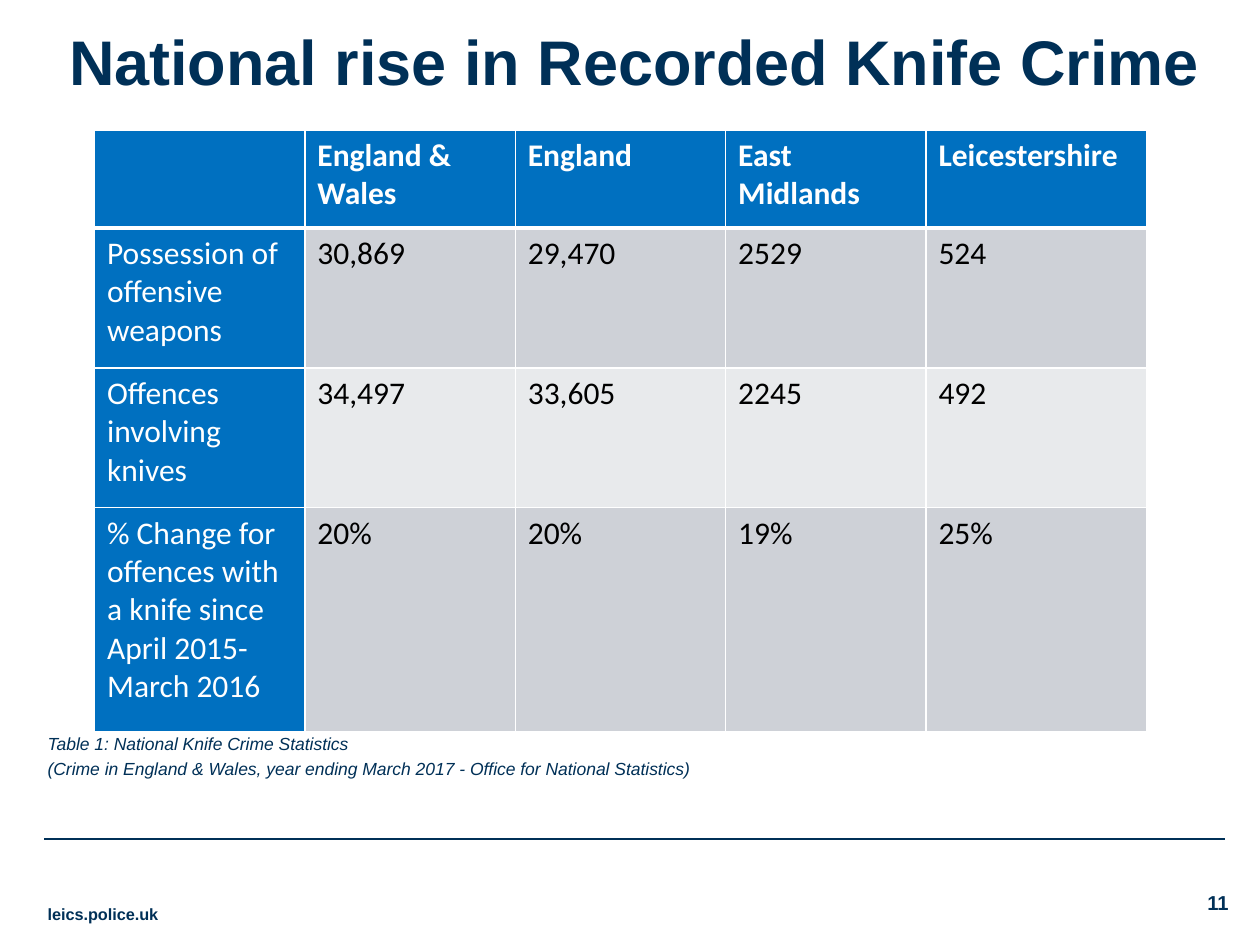
from lxml import etree
from pptx import Presentation
from pptx.dml.color import RGBColor
from pptx.enum.shapes import MSO_CONNECTOR
from pptx.enum.text import PP_ALIGN
from pptx.oxml import parse_xml
from pptx.oxml.ns import nsdecls, qn
from pptx.util import Inches, Pt

STRAIGHT = MSO_CONNECTOR.STRAIGHT
LEFT, RIGHT = PP_ALIGN.LEFT, PP_ALIGN.RIGHT
NAVY = RGBColor(0x00, 0x30, 0x57)
BLUE = RGBColor(0x00, 0x70, 0xC0)
WHITE = RGBColor(0xFF, 0xFF, 0xFF)
BLACK = RGBColor(0x00, 0x00, 0x00)
DARK_BAND = RGBColor(0xCE, 0xD1, 0xD7)
LIGHT_BAND = RGBColor(0xE8, 0xEA, 0xEC)

TITLE = {"size": Pt(36), "bold": True}
CAPTION = {"size": Pt(10), "italic": True}
NUMBER = {"size": Pt(11.5), "bold": True}
ADDRESS = {"size": Pt(16), "bold": True}

COLUMN_WIDTHS = [1.67, 1.67, 1.67, 1.59, 1.75]
ROW_HEIGHTS = [0.78, 1.11, 1.11, 1.78]
CRIME_ROWS = [
    ["", "England & Wales", "England", "East Midlands", "Leicestershire"],
    ["Possession of offensive weapons", "30,869", "29,470", "2529", "524"],
    ["Offences involving knives", "34,497", "33,605", "2245", "492"],
    ["% Change for offences with a knife since April 2015- March 2016",
     "20%", "20%", "19%", "25%"],
]


class SlideBuilder:
    """Holds the house style and the current slide."""

    text_format = {"name": "Arial"}
    cell_format = {"name": "Calibri", "size": Pt(18)}

    def __init__(self, slide):
        self.slide = slide

    def add_span(self, para, text, color, *formats):
        span = para.add_run()
        span.text = text
        for values in formats:
            for name, value in values.items():
                setattr(span.font, name, value)
        span.font.color.rgb = color
        return span

    def text(self, area, lines, style, align=LEFT, gap=0):
        box = self.slide.shapes.add_textbox(*map(Inches, area))
        frame = box.text_frame
        frame.word_wrap = True
        for index, line in enumerate(lines):
            para = frame.add_paragraph() if index else frame.paragraphs[0]
            para.alignment = align
            if index:
                para.space_before = Pt(gap)
            span = self.add_span(para, line, NAVY, self.text_format, style)
        return span

    def superscript(self, area, line, style):
        span = self.text(area, [line], style)
        span.font._element.set("baseline", "30000")

    def rule(self, left, right, top):
        ends = map(Inches, (left, top, right, top))
        line = self.slide.shapes.add_connector(STRAIGHT, *ends)
        line.line.color.rgb = NAVY
        line.line.width = Pt(0.75)
        etree.SubElement(line._element.spPr, qn("a:effectLst"))

    def borders(self, cell, widths):
        properties = cell._tc.get_or_add_tcPr()
        for index, (side, width) in enumerate(widths.items()):
            properties.insert(index, parse_xml(
                f'<a:ln{side} {nsdecls("a")} w="{Pt(width)}"><a:solidFill>'
                f'<a:srgbClr val="{WHITE}"/></a:solidFill></a:ln{side}>'))

    def table(self, left, top, widths, heights, rows):
        area = map(Inches, (left, top, sum(widths), sum(heights)))
        table = self.slide.shapes.add_table(len(rows), len(widths), *area).table
        for column, width in zip(table.columns, widths):
            column.width = Inches(width)
        for row, height in zip(table.rows, heights):
            row.height = Inches(height)
        for r, values in enumerate(rows):
            for c, value in enumerate(values):
                cell = table.cell(r, c)
                heading = r == 0 or c == 0
                cell.fill.solid()
                band = DARK_BAND if r % 2 else LIGHT_BAND
                cell.fill.fore_color.rgb = BLUE if heading else band
                self.borders(cell, {"L": 1, "R": 1, "T": 3 if r == 1 else 1,
                                    "B": 3 if r == 0 else 1})
                if value:
                    self.add_span(cell.text_frame.paragraphs[0], value,
                                  WHITE if heading else BLACK,
                                  self.cell_format, {"bold": r == 0})


def main():
    deck = Presentation()
    deck.slide_width, deck.slide_height = Inches(10), Inches(7.5)
    page = SlideBuilder(deck.slides.add_slide(deck.slide_layouts[6]))
    page.rule(0.35, 9.72, 6.66)
    page.superscript((0.28, 7.1, 1.34, 0.64), "leics.police.uk", ADDRESS)
    page.text((0.28, 5.77, 9.37, 0.45), [
        "Table 1: National Knife Crime Statistics",
        "(Crime in England & Wales, year ending March 2017 - Office for National Statistics)",
    ], CAPTION, gap=2)
    page.text((9.41, 7.02, 0.44, 0.35), ["11"], NUMBER, RIGHT)
    page.text((0.45, 0.13, 9.37, 0.79), ["National rise in Recorded Knife Crime"], TITLE)
    page.table(0.75, 1.03, COLUMN_WIDTHS, ROW_HEIGHTS, CRIME_ROWS)
    deck.save("out.pptx")


if __name__ == "__main__":
    main()
